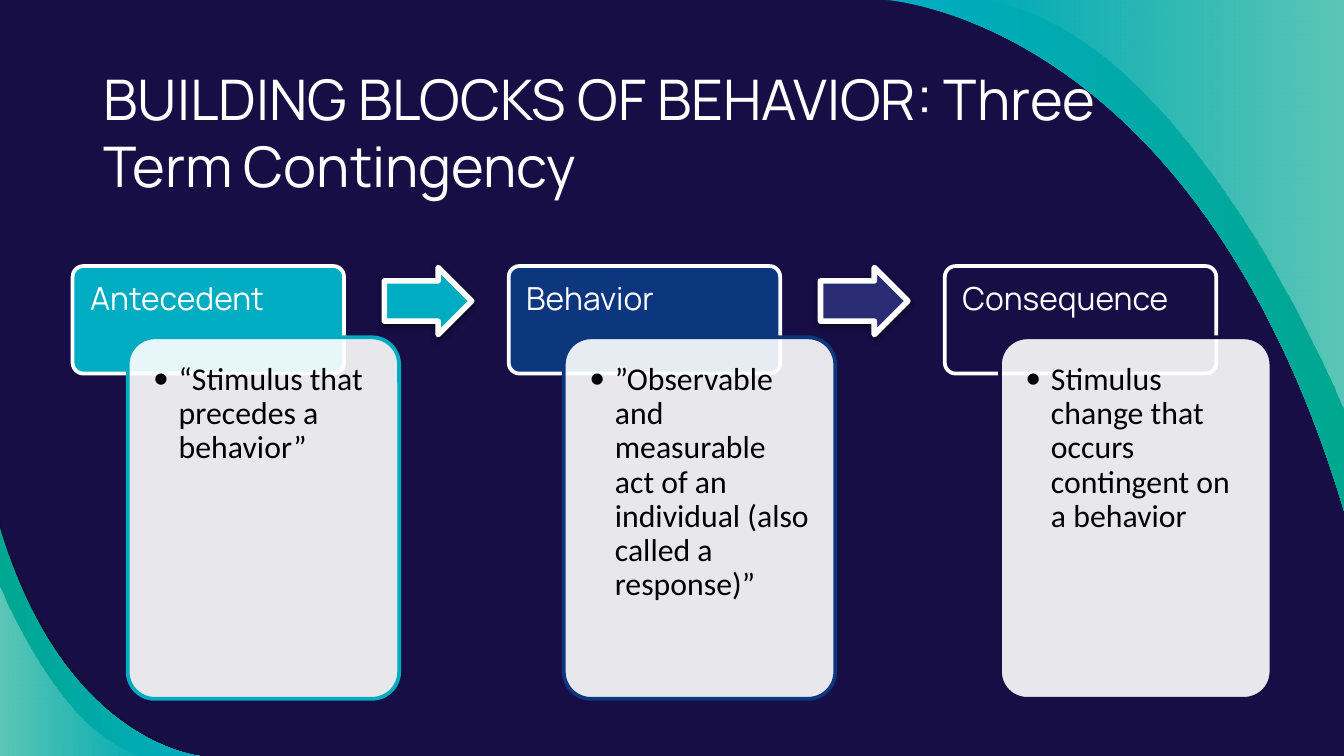
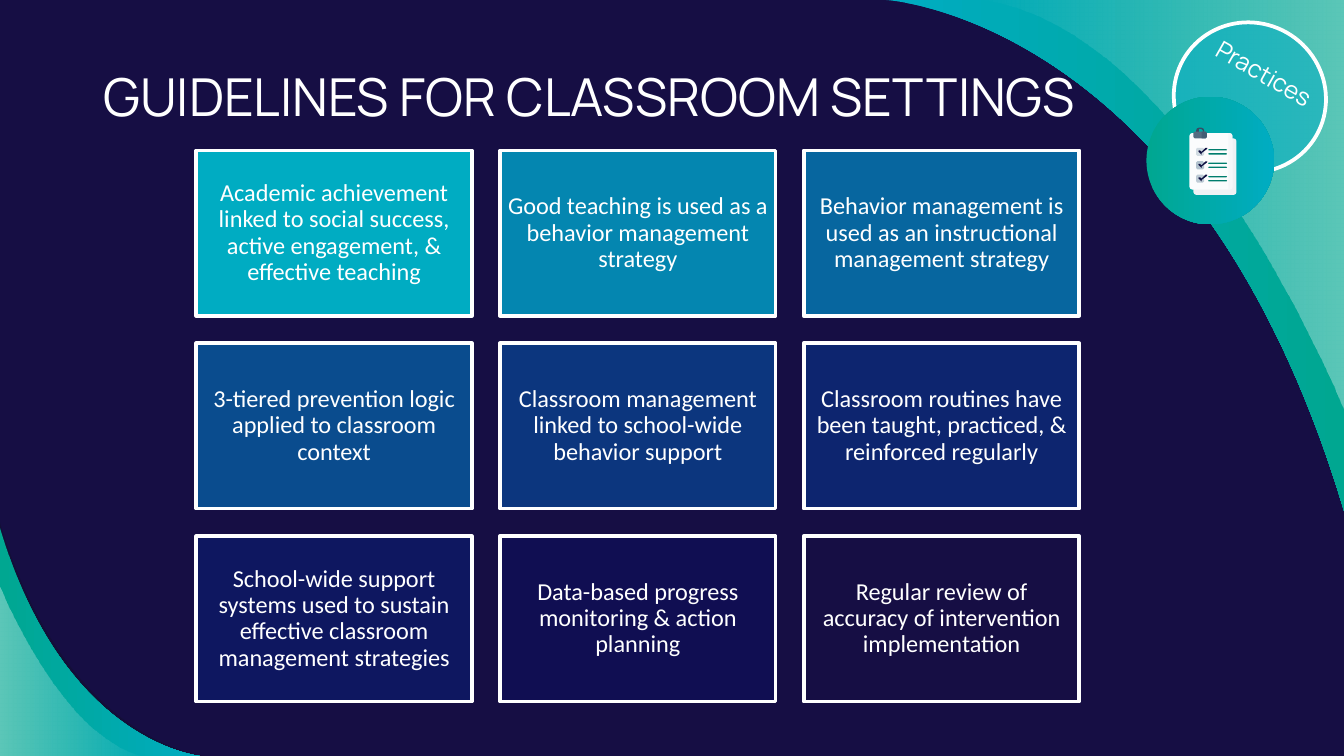
from lxml import etree
from pptx import Presentation
from pptx import util as u
from pptx.dml.color import RGBColor
from pptx.enum import shapes, text
from pptx.oxml.ns import qn


class Theme:
    navy = "160E44"
    deep = "12102F"
    white = "FFFFFF"
    black = "000000"
    cyan = "00ACC2"
    green = "00A791"
    blue = "0C367E"
    indigo = "292C73"
    ruled = "007D6D"
    tick = "0D0F41"
    ring = "344D65"
    clip = "546C81"
    clip_shade = "435D74"
    back_sheet = "EEF1F4"
    front_sheet = "FBFCFD"
    sheet_edge = "F5F7F9"
    checkboxes = ["D1DBE2", "B2C2CE", "BECBD5"]
    tiles = ["00ACC2", "0486B0", "07669F", "0A4C8E", "0C367E",
             "0D256F", "0E1760", "100E52", "160E44"]
    heading, body = "Manrope", "Calibri"
    title_size, title_small, card_size, tile_size = 30, 28, 17, 13


TERMS_TITLE = "BUILDING BLOCKS OF BEHAVIOR: Three Term Contingency"
TERMS = [
    ("Antecedent", "“Stimulus that precedes a behavior”", Theme.cyan, Theme.cyan),
    ("Behavior", "”Observable and measurable act of an individual (also called a response)”",
     Theme.blue, Theme.indigo),
    ("Consequence", "Stimulus change that occurs contingent on a behavior", Theme.navy, None),
]
GUIDELINES_TITLE = "GUIDELINES FOR CLASSROOM SETTINGS"
GUIDELINES = [
    "Academic achievement linked to social success, active engagement, & effective teaching",
    "Good teaching is used as a behavior management strategy",
    "Behavior management is used as an instructional management strategy",
    "3-tiered prevention logic applied to classroom context",
    "Classroom management linked to school-wide behavior support",
    "Classroom routines have been taught, practiced, & reinforced regularly",
    "School-wide support systems used to sustain effective classroom management strategies",
    "Data-based progress monitoring & action planning",
    "Regular review of accuracy of intervention implementation",
]
BADGE = "Practices"

CYAN_TO_GREEN = [(Theme.cyan, 100), (Theme.green, 100)]
GREEN_TO_CYAN = CYAN_TO_GREEN[::-1]
CLEAR_TO_WHITE = [(Theme.white, 0), (Theme.white, 36)]
WHITE_TO_CLEAR = CLEAR_TO_WHITE[::-1]
BANDS = [
    ([(0, 3.89), [(0.51, 5.57), (1.56, 5.63), (1.56, 5.63)], (0, 5.63)], [(Theme.deep, 54)]),
    ([(1.52, 5.63), [(1.52, 5.63), (0.49, 5.57), (0, 3.93)], (0, 5.63)], GREEN_TO_CYAN),
    ([(0, 4.37), [(0, 4.37), (0.47, 5.55), (1.11, 5.63)], (0, 5.63)], WHITE_TO_CLEAR),
    ([(6.59, 0), [(6.59, 0), (8.9, 0.12), (10, 3.8)], (10, 0)], CYAN_TO_GREEN),
    ([(10, 3.06), [(10, 3.06), (8.85, 0.19), (7.29, 0)], (10, 0)], CLEAR_TO_WHITE),
]
TICK = [(0.07, 0), [(0.07, 0), (0.06, 0), (0.06, 0)], (0.03, 0.03), (0.02, 0.02),
        [(0.02, 0.02), (0.02, 0.02), (0.01, 0.02)], [(0.01, 0.02), (0, 0.03), (0.01, 0.03)],
        (0.02, 0.04), [(0.02, 0.04), (0.02, 0.05), (0.03, 0.05)],
        [(0.03, 0.05), (0.03, 0.04), (0.03, 0.04)], (0.07, 0.01),
        [(0.08, 0), (0.07, 0), (0.07, 0)]]
CLIP_RING = [(8.92, 0.95), [(8.91, 0.95), (8.9, 0.96), (8.9, 0.97)], (8.9, 0.99),
             [(8.9, 0.99), (8.91, 1), (8.91, 1)], [(8.92, 1), (8.92, 0.99), (8.92, 0.99)],
             (8.92, 0.97), [(8.92, 0.97), (8.92, 0.96), (8.92, 0.96)], (8.94, 0.96),
             [(8.95, 0.96), (8.95, 0.97), (8.95, 0.97)], (8.95, 0.99),
             [(8.95, 0.99), (8.95, 1), (8.96, 1)], [(8.96, 1), (8.96, 0.99), (8.96, 0.99)],
             (8.96, 0.97), [(8.96, 0.96), (8.95, 0.95), (8.94, 0.95)]]


def paint(shape, fill, line=None, width=2):
    stops = [(fill, 100)] if isinstance(fill, str) else fill
    shape.shadow.inherit = False
    if len(stops) == 1:
        shape.fill.solid()
        shape.fill.fore_color.rgb = RGBColor.from_string(stops[0][0])
    else:
        shape.fill.gradient()
        shape.fill.gradient_angle = 0
        for stop, (color, _) in zip(shape.fill.gradient_stops, stops):
            stop.color.rgb = RGBColor.from_string(color)
    for node, (_, alpha) in zip(shape.element.spPr.iter(qn("a:srgbClr")), stops):
        if alpha < 100:
            etree.SubElement(node, qn("a:alpha"), val=str(alpha * 1000))
    if line:
        shape.line.color.rgb = RGBColor.from_string(line)
        shape.line.width = u.Pt(width)
    else:
        shape.line.fill.background()
    return shape


def add_block(slide, kind, at, fill, line=None, width=2, adjust=()):
    shape = slide.shapes.add_shape(kind, *map(u.Inches, at))
    for index, value in enumerate(adjust):
        shape.adjustments[index] = value
    return paint(shape, fill, line, width)


def add_outline(slide, parts, fill, left=0, top=0):
    runs = [part if isinstance(part, list) else [part] for part in parts]
    start, *rest = [(u.Inches(left + x), u.Inches(top + y)) for run in runs for x, y in run]
    builder = slide.shapes.build_freeform(*start)
    builder.add_line_segments(rest, close=True)
    shape = builder.convert_to_shape()
    segments = iter(list(shape.element.spPr.iter(qn("a:lnTo"))))
    for run in runs[1:]:
        first, *others = [next(segments) for _ in run]
        if others:
            first.tag_holder = None
            curve = etree.Element(qn("a:cubicBezTo"))
            first.addprevious(curve)
            for segment in (first, *others):
                curve.append(segment[0])
                segment.getparent().remove(segment)
    return paint(shape, fill)


def add_rounded(slide, at, radius, fill, square_left=False):
    left, top, width, height = at
    right, bottom, half = left + width, top + height, radius / 2
    right_side = [(right - radius, bottom),
                  [(right - half, bottom), (right, bottom - half), (right, bottom - radius)],
                  (right, top + radius),
                  [(right, top + half), (right - half, top), (right - radius, top)]]
    if square_left:
        parts = [(left, top), (left, bottom), *right_side]
    else:
        parts = [(left + radius, top),
                 [(left + half, top), (left, top + half), (left, top + radius)],
                 (left, bottom - radius),
                 [(left, bottom - half), (left + half, bottom), (left + radius, bottom)],
                 *right_side]
    add_outline(slide, parts, fill)


def write(shape, words, *, font=Theme.body, size=Theme.tile_size, color=Theme.white,
          align=text.PP_ALIGN.LEFT, anchor=text.MSO_ANCHOR.TOP, inset=0.05,
          spacing=0.9, bullet=False, wrap=True):
    frame = shape.text_frame
    frame.word_wrap = wrap
    frame.auto_size = text.MSO_AUTO_SIZE.NONE
    frame.vertical_anchor = anchor
    for side in ("left", "top", "right", "bottom"):
        setattr(frame, f"margin_{side}", u.Inches(inset))
    para = frame.paragraphs[0]
    para.alignment = align
    para.line_spacing = spacing
    if bullet:
        para.level = 1
        props = para._p.get_or_add_pPr()
        props.set("marL", str(u.Inches(0.19)))
        props.set("indent", str(-u.Inches(0.19)))
        tint = etree.SubElement(props, qn("a:buClr"))
        etree.SubElement(tint, qn("a:srgbClr"), val=color)
        etree.SubElement(props, qn("a:buFont"), typeface=font)
        etree.SubElement(props, qn("a:buChar"), char="•")
    span = para.add_run()
    span.text = words
    span.font.name = font
    span.font.size = u.Pt(size)
    span.font.color.rgb = RGBColor.from_string(color)


def add_label(slide, at, words, **style):
    box = slide.shapes.add_textbox(*map(u.Inches, at))
    write(box, words, **style)
    return box


def cast_shadow(shape):
    effects = shape.element.spPr.find(qn("a:effectLst"))
    shadow = etree.SubElement(effects, qn("a:outerShdw"), blurRad=str(u.Pt(3.1)),
                              dist=str(u.Pt(1.6)), dir="5400000", rotWithShape="0")
    color = etree.SubElement(shadow, qn("a:srgbClr"), val=Theme.black)
    etree.SubElement(color, qn("a:alpha"), val="38000")


def dress_layout(deck, layout, slide):
    background = deck.slide_master.background.fill
    background.solid()
    background.fore_color.rgb = RGBColor.from_string(Theme.navy)
    title = layout.placeholders[0]
    title.left, title.top, title.width, title.height = map(u.Inches, (0.67, 0.38, 7.69, 0.69))
    tree = title.element.getparent()
    for parts, fill in BANDS:
        tree.append(add_outline(slide, parts, fill).element)


def add_title(slide, words, size):
    write(slide.shapes.title, words, font=Theme.heading, size=size, inset=0.1, spacing=1)


def build_terms(slide):
    add_title(slide, TERMS_TITLE, Theme.title_size)
    rounded = shapes.MSO_SHAPE.ROUNDED_RECTANGLE
    pitch = (7.03 - 0.54) / 2
    for index, (term, meaning, color, arrow_color) in enumerate(TERMS):
        left = 0.54 + index * pitch
        add_block(slide, rounded, (left, 1.98, 2.02, 0.8), color, Theme.white, adjust=[0.1])
        add_label(slide, (left, 1.98, 2.02, 0.54), term, font=Theme.heading,
                  size=Theme.card_size, inset=0.13)
        add_block(slide, rounded, (left + 0.41, 2.51, 2.02, 2.69),
                  [(Theme.white, 90)], color, adjust=[0.1])
        add_label(slide, (left + 0.47, 2.57, 1.9, 2.57), meaning, size=Theme.card_size,
                  color=Theme.black, inset=0.13, bullet=True)
        if arrow_color:
            arrow = add_block(slide, shapes.MSO_SHAPE.RIGHT_ARROW, (left + 2.32, 1.99, 0.65, 0.5),
                              arrow_color, Theme.white, 3, adjust=[0.6, 0.5])
            cast_shadow(arrow)


def draw_clipboard(slide):
    add_outline(slide, CLIP_RING, Theme.ring)
    add_rounded(slide, (8.88, 1.03, 0.32, 0.42), 0.02, Theme.back_sheet)
    add_rounded(slide, (8.85, 0.99, 0.32, 0.42), 0.02, Theme.front_sheet)
    add_rounded(slide, (9.14, 0.99, 0.03, 0.42), 0.02, Theme.sheet_edge, square_left=True)
    tops = [1.1 + row * 0.1 for row in range(3)]
    for top, color in zip(tops, Theme.checkboxes):
        add_rounded(slide, (8.9, top, 0.06, 0.06), 0.01, color)
    for top in tops:
        for offset in (0.01, 0.04):
            add_rounded(slide, (8.99, top + offset, 0.14, 0.01), 0.01 / 2, Theme.ruled)
    for top in tops:
        add_outline(slide, TICK, Theme.tick, 8.91, top)
    add_rounded(slide, (8.88, 0.98, 0.1, 0.05), 0.01, Theme.clip)
    add_rounded(slide, (8.94, 0.98, 0.04, 0.05), 0.01, Theme.clip_shade, square_left=True)


def build_guidelines(slide):
    add_title(slide, GUIDELINES_TITLE, Theme.title_small)
    oval = shapes.MSO_SHAPE.OVAL
    disc = add_block(slide, oval, (8.73, 0.17, 1.14, 1.11), [(Theme.cyan, 50)], Theme.white)
    label = add_label(slide, (8.87, 0.43, 0.84, 0.64), BADGE, font=Theme.heading,
                      align=text.PP_ALIGN.CENTER, inset=0, wrap=False)
    disc.rotation = label.rotation = 29.6
    add_block(slide, oval, (8.53, 0.72, 0.95, 0.95), GREEN_TO_CYAN)
    draw_clipboard(slide)
    row_pitch = (3.99 - 1.12) / 2
    for index, (guideline, color) in enumerate(zip(GUIDELINES, Theme.tiles)):
        row, column = divmod(index, 3)
        at = (1.46 + column * 2.26, 1.12 + row * row_pitch, 2.05, 1.23)
        add_block(slide, shapes.MSO_SHAPE.RECTANGLE, at, color, Theme.white)
        add_label(slide, at, guideline, align=text.PP_ALIGN.CENTER,
                  anchor=text.MSO_ANCHOR.MIDDLE)


def main():
    deck = Presentation()
    deck.slide_width = u.Inches(10)
    deck.slide_height = deck.slide_width * 9 // 16
    layout = deck.slide_layouts[5]
    terms, guidelines = (deck.slides.add_slide(layout) for _ in range(2))
    dress_layout(deck, layout, terms)
    build_terms(terms)
    build_guidelines(guidelines)
    deck.save("out.pptx")


if __name__ == "__main__":
    main()
